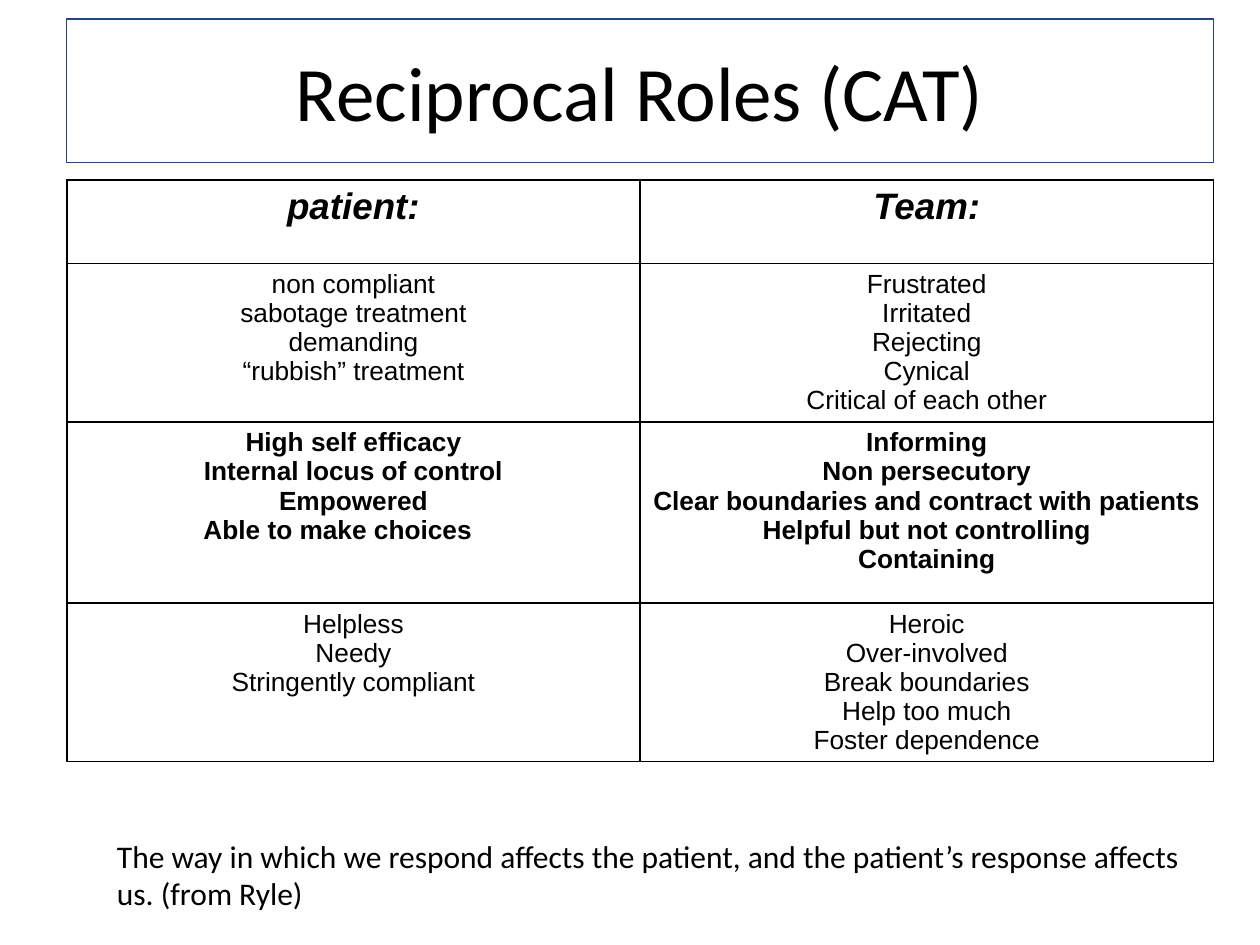
from dataclasses import dataclass

from lxml.etree import SubElement
from pptx import Presentation
from pptx.dml.color import RGBColor
from pptx.enum.text import MSO_ANCHOR as Anchor, MSO_AUTO_SIZE as AutoSize, PP_ALIGN as Align
from pptx.oxml.ns import qn
from pptx.util import Inches, Pt


@dataclass(frozen=True)
class Theme:
    """Colours, fonts and type sizes of the slide."""
    ink: str = "000000"
    frame: str = "1F497D"
    text_font: str = "Calibri"
    table_font: str = "Arial"
    title_size: int = 44
    heading_size: int = 21
    cell_size: int = 15
    note_size: int = 18
    frame_width: float = 0.75
    border_width: float = 1
    hanging_indent: float = 0.38


ROLES = [
    (["patient:"], ["Team:"]),
    (["non compliant", "sabotage treatment", "demanding", "“rubbish” treatment"],
     ["Frustrated", "Irritated", "Rejecting", "Cynical", "Critical of each other"]),
    (["High self efficacy", "Internal locus of control", "Empowered", "Able to make choices\t"],
     ["Informing", "Non persecutory", "Clear boundaries and contract with patients",
      "Helpful but not controlling", "Containing"]),
    (["Helpless", "Needy", "Stringently compliant"],
     ["Heroic", "Over-involved", "Break boundaries", "Help too much", "Foster dependence"]),
]
ROW_HEIGHTS = [0.66, 1.09, 1.44, 1.15]
NOTE = ("The way in which we respond affects the patient, and the patient’s response "
        "affects us. (from Ryle)")


def apply_format(target, values):
    """Set each attribute named in values on the target."""
    for name, value in values.items():
        setattr(target, name, value)


class SlideBuilder:
    """Holds the theme and the current slide, and adds its elements."""

    def __init__(self, slide, theme):
        self.slide = slide
        self.theme = theme

    def fill_text(self, text_frame, lines, font, size, align, bold=False, italic=False):
        """Fill a text frame with one paragraph per line and return the paragraphs."""
        text_frame.text = "\n".join(lines)
        for paragraph in text_frame.paragraphs:
            paragraph.alignment = align
            for run in paragraph.runs:
                apply_format(run.font, {"name": font, "size": Pt(size), "bold": bold, "italic": italic})
                run.font.color.rgb = RGBColor.from_string(self.theme.ink)
        return text_frame.paragraphs

    def title(self, text, left, top, width, height):
        """Place the framed title."""
        shape = self.slide.shapes.title
        apply_format(shape, {"left": Inches(left), "top": Inches(top),
                             "width": Inches(width), "height": Inches(height)})
        shape.line.color.rgb = RGBColor.from_string(self.theme.frame)
        shape.line.width = Pt(self.theme.frame_width)
        shape.text_frame.vertical_anchor = Anchor.MIDDLE
        self.fill_text(shape.text_frame, [text], self.theme.text_font, self.theme.title_size, Align.CENTER)

    def border(self, cell):
        """Draw a solid line on every side of a cell."""
        properties = cell._tc.get_or_add_tcPr()
        for position, side in enumerate(("a:lnL", "a:lnR", "a:lnT", "a:lnB")):
            line = properties.makeelement(qn(side), {"w": str(Pt(self.theme.border_width))})
            fill = SubElement(line, qn("a:solidFill"))
            SubElement(fill, qn("a:srgbClr"), val=self.theme.ink)
            properties.insert(position, line)

    def cell(self, cell, lines, **style):
        """Fill one table cell with centred, hanging paragraphs."""
        cell.fill.background()
        self.border(cell)
        indent = Inches(self.theme.hanging_indent)
        for paragraph in self.fill_text(cell.text_frame, lines, self.theme.table_font,
                                        align=Align.CENTER, **style):
            properties = paragraph._p.get_or_add_pPr()
            properties.set("marL", str(indent))
            properties.set("indent", str(-indent))

    def table(self, rows, heights, left, top, width):
        """Add the roles table with a heading row and a bold middle row."""
        columns = len(rows[0])
        table = self.slide.shapes.add_table(len(rows), columns, Inches(left), Inches(top),
                                            Inches(width), Inches(sum(heights))).table
        apply_format(table, {"first_row": False, "horz_banding": False})
        heading = {"size": self.theme.heading_size, "bold": True, "italic": True}
        plain = {"size": self.theme.cell_size}
        styles = [heading, plain, {**plain, "bold": True}, plain]
        for row, (texts, height, style) in enumerate(zip(rows, heights, styles)):
            table.rows[row].height = Inches(height)
            for column, lines in enumerate(texts):
                self.cell(table.cell(row, column), lines, **style)

    def note(self, text, left, top, width, height):
        """Add the closing remark."""
        shape = self.slide.shapes.add_textbox(Inches(left), Inches(top), Inches(width), Inches(height))
        apply_format(shape.text_frame, {"word_wrap": True, "auto_size": AutoSize.SHAPE_TO_FIT_TEXT})
        self.fill_text(shape.text_frame, [text], self.theme.text_font, self.theme.note_size, Align.LEFT)


def main():
    """Build and save the presentation."""
    presentation = Presentation()
    apply_format(presentation, {"slide_width": Inches(10), "slide_height": Inches(7.5)})
    slide = presentation.slides.add_slide(presentation.slide_layouts[5])
    builder = SlideBuilder(slide, Theme())
    builder.title("Reciprocal Roles (CAT)", 0.53, 0.15, 9.1, 1.14)
    builder.table(ROLES, ROW_HEIGHTS, 0.53, 1.43, 9.1)
    builder.note(NOTE, 0.83, 6.59, 8.74, 0.71)
    presentation.save("out.pptx")


if __name__ == "__main__":
    main()
